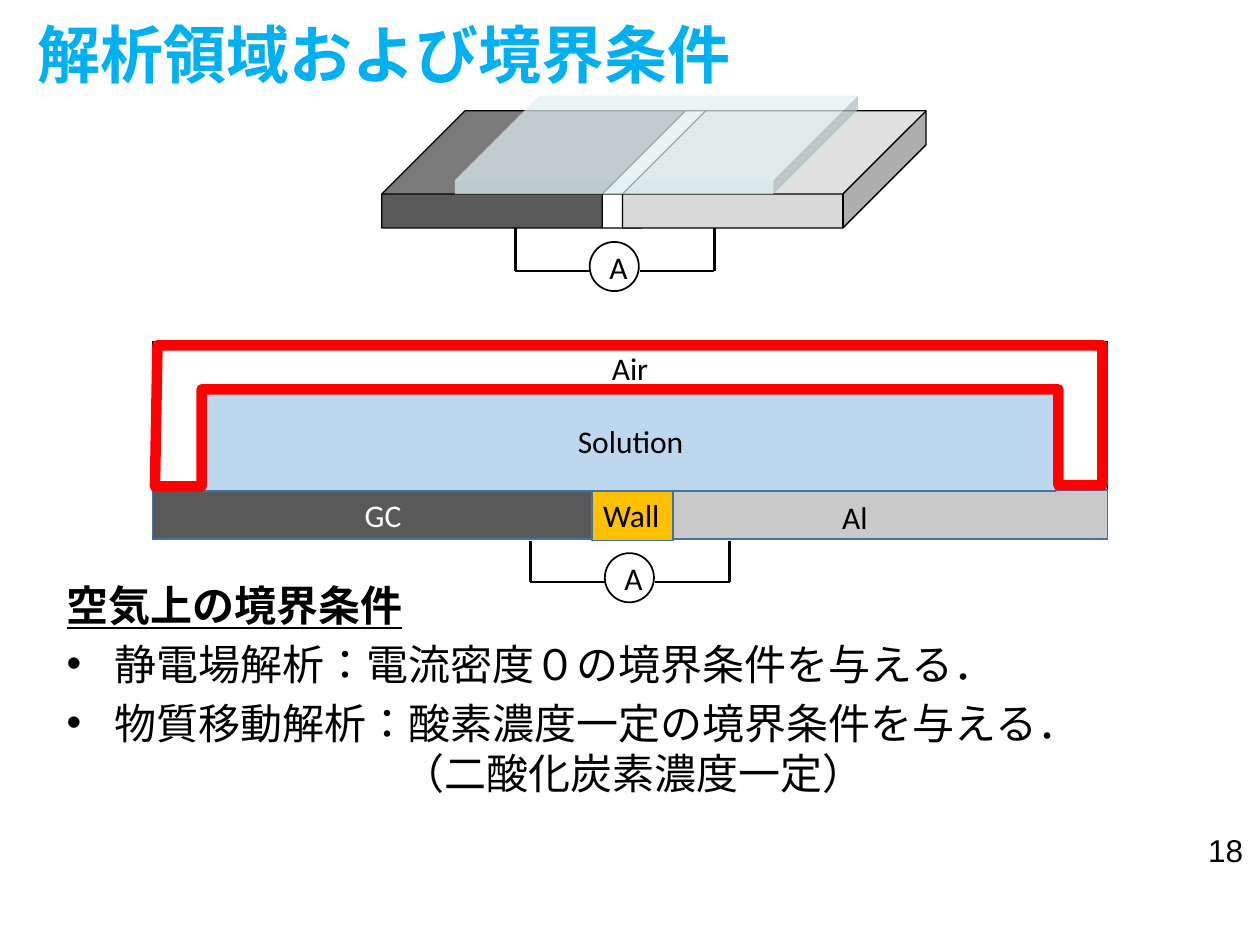
import pptx
import pptx.util
import pptx.dml.color
import pptx.enum.lang
import pptx.enum.shapes
import pptx.enum.text
import pptx.oxml.ns
import lxml.etree

Inches, Pt = pptx.util.Inches, pptx.util.Pt
hue = pptx.dml.color.RGBColor.from_string
kinds = pptx.enum.shapes.MSO_SHAPE
align = pptx.enum.text.PP_ALIGN
anchor = pptx.enum.text.MSO_ANCHOR
qn = pptx.oxml.ns.qn

deck = pptx.Presentation()
deck.slide_width, deck.slide_height = Inches(10), Inches(7.5)
slide = deck.slides.add_slide(deck.slide_layouts[6])
shapes = slide.shapes


def block(kind, place, fill, line, width):
    shape = shapes.add_shape(kind, *map(Inches, place))
    shape.shadow.inherit = False
    shape.fill.solid()
    shape.fill.fore_color.rgb = hue(fill)
    if line:
        shape.line.color.rgb = hue(line)
        shape.line.width = Pt(width)
    else:
        shape.line.fill.background()
    return shape


def style(par, size, face, color, bold=False):
    for run in par.runs:
        run.font.size = Pt(size)
        run.font.name = face
        run.font.bold = bold
        run.font.color.rgb = hue(color)
        run.font.language_id = pptx.enum.lang.MSO_LANGUAGE_ID.JAPANESE


title = shapes.add_textbox(*map(Inches, (0.2, 0.09, 9.61, 0.67))).text_frame
title.word_wrap = True
title.vertical_anchor = anchor.MIDDLE
title.text = "解析領域および境界条件"
style(title.paragraphs[0], 36, "Arial", "00B0F0", True)

for place, fill, line in (
    ((1.21, 2.71, 7.58, 1.57), "FFFFFF", "000000"),
    ((5, 3.89, 3.79, 0.39), "C9C9C9", "43739E"),
    ((1.21, 3.89, 3.79, 0.39), "595959", "43739E"),
    ((1.61, 3.11, 6.77, 0.79), "BDD7EE", "43739E"),
):
    block(kinds.RECTANGLE, place, fill, line, 1)

edge = [(Inches(x), Inches(y)) for x, y in (
    (1.25, 2.74), (8.75, 2.74), (8.75, 3.85), (8.4, 3.85),
    (8.4, 3.09), (1.6, 3.09), (1.6, 3.86), (1.23, 3.86))]
path = shapes.build_freeform(*edge[0])
path.add_line_segments(edge[1:], close=True)
air = path.convert_to_shape()
air.shadow.inherit = False
air.fill.background()
air.line.color.rgb = hue("FF0000")
air.line.width = Pt(6)
lxml.etree.SubElement(air._element.spPr.find(qn("a:ln")), qn("a:round"))

block(kinds.RECTANGLE, (4.7, 3.9, 0.64, 0.39), "FFC000", "43739E", 1)

for text, left, top, width, color, face, side in (
    ("Air", 4.69, 2.72, 0.62, "000000", "Calibri", align.CENTER),
    ("Solution", 4.34, 3.3, 1.33, "000000", "Calibri", align.CENTER),
    ("GC", 2.79, 3.89, 0.5, "FFFFFF", "Calibri", align.CENTER),
    ("Wall", 4.67, 3.89, 0.68, "000000", "Calibri", align.CENTER),
    ("Al", 6.53, 3.9, 0.51, "000000", "Calibri", align.CENTER),
    ("18", 9.49, 6.55, 0.51, "000000", "Arial", align.LEFT),
):
    frame = shapes.add_textbox(*map(Inches, (left, top, width, 0.4))).text_frame
    frame.word_wrap = False
    frame.text = text
    frame.paragraphs[0].alignment = side
    style(frame.paragraphs[0], 18, face, color)

for mid, top, base, ring in ((4.88, 1.67, 2.15, 1.92), (5, 4.29, 4.62, 4.39)):
    for sign in (-1, 1):
        end, near = mid + sign * 0.79, mid + sign * 0.2
        for ends in ((end, top, end, base), (near, base, end, base)):
            wire = shapes.add_connector(
                pptx.enum.shapes.MSO_CONNECTOR.STRAIGHT, *map(Inches, ends))
            wire.line.color.rgb = hue("000000")
            wire.line.width = Pt(1.5)
            lxml.etree.SubElement(wire._element.spPr, qn("a:effectLst"))
    meter = block(kinds.OVAL, (mid - 0.2, ring, 0.39, 0.39), "FFFFFF", "000000", 1)
    frame = meter.text_frame
    frame.text = "A"
    frame.vertical_anchor = anchor.MIDDLE
    frame.paragraphs[0].alignment = align.CENTER
    style(frame.paragraphs[0], 18, "Calibri", "000000")

for place, ratio, fill, line in (
    ((3.03, 0.88, 2.41, 0.93), 0.71, "595959", "000000"),
    ((4.78, 0.88, 0.97, 0.93), 0.71, "FFFFFF", "000000"),
    ((4.94, 0.88, 2.41, 0.93), 0.71, "D9D9D9", "000000"),
    ((3.61, 0.76, 3.2, 0.78), 0.86, "DAEDEF", None),
):
    cube = block(kinds.CUBE, place, fill, line, 0.75)
    cube.adjustments[0] = ratio
tint = cube._element.spPr.find(qn("a:solidFill")).find(qn("a:srgbClr"))
lxml.etree.SubElement(tint, qn("a:alpha")).set("val", "70000")

body = shapes.add_textbox(*map(Inches, (0.43, 4.55, 9, 1.41))).text_frame
body.word_wrap = True
body.text = "空気上の境界条件"
head = body.paragraphs[0]
style(head, 24, "Arial", "000000", True)
head.runs[0].font.underline = True
for text, left, hang, gap in (
    ("静電場解析：電流密度０の境界条件を与える．", 0.38, 0.38, 4.8),
    ("物質移動解析：酸素濃度一定の境界条件を与える．", 0.38, 0.38, 4.8),
    ("（二酸化炭素濃度一定）", 2.67, 0, 0),
):
    par = body.add_paragraph()
    props = par._p.get_or_add_pPr()
    props.set("marL", str(Inches(left)))
    props.set("indent", str(-Inches(hang)))
    if hang:
        lxml.etree.SubElement(props, qn("a:buFont")).set("typeface", "Arial")
        lxml.etree.SubElement(props, qn("a:buChar")).set("char", "•")
    par.space_before = Pt(gap)
    par.text = text
    style(par, 24, "Arial", "000000")

deck.save("out.pptx")
